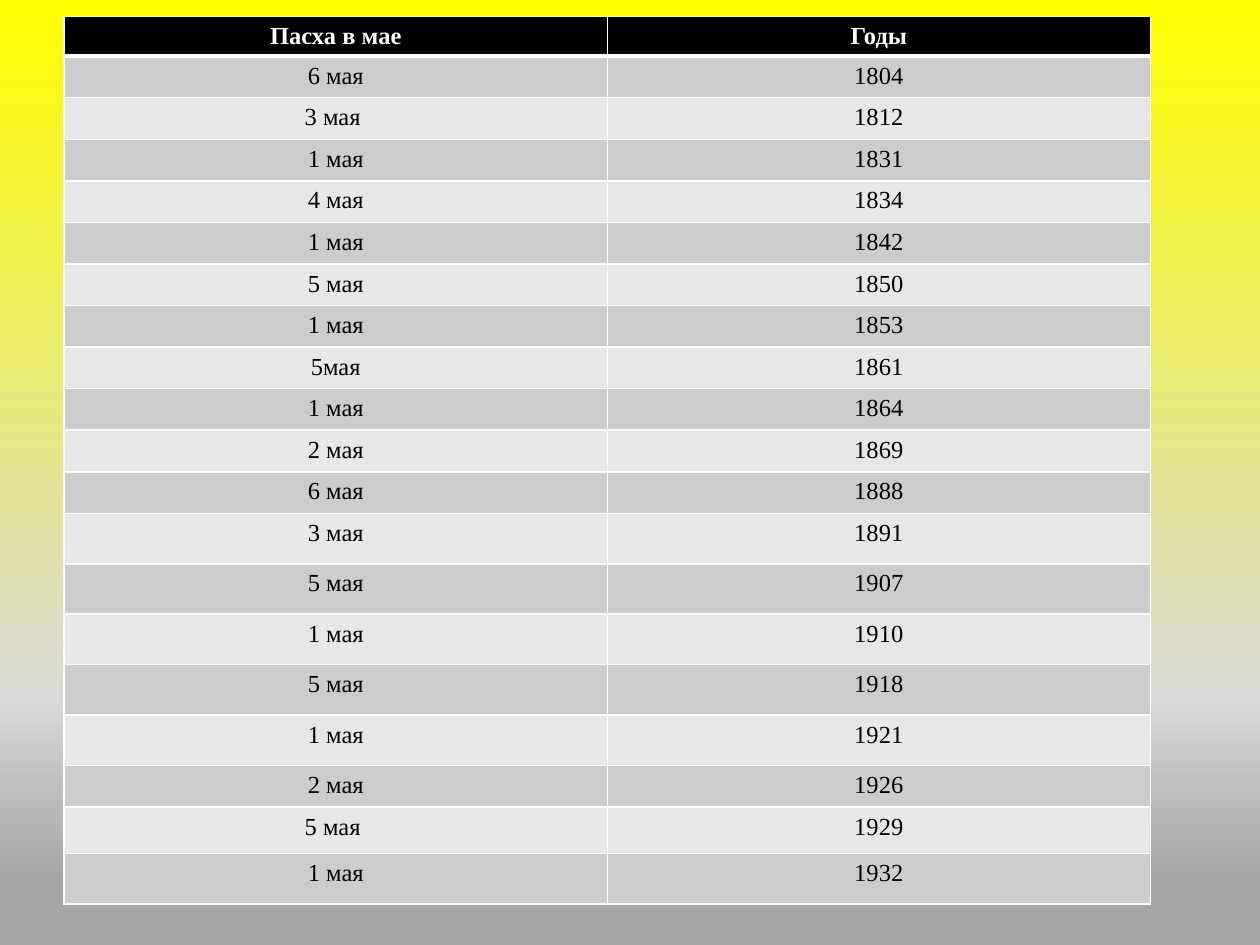
import pptx
import pptx.dml.color
import pptx.enum.text
import pptx.oxml
import pptx.oxml.ns
import pptx.util
from lxml import etree

Inches = pptx.util.Inches
qn = pptx.oxml.ns.qn

# Content: May Easter dates and their years
HEADINGS = ("Пасха в мае", "Годы")
EASTERS = [
    ("6 мая", "1804"), ("3 мая ", "1812"), ("1 мая", "1831"),
    ("4 мая", "1834"), ("1 мая", "1842"), ("5 мая", "1850"),
    ("1 мая", "1853"), ("5мая", "1861"), ("1 мая", "1864"),
    ("2 мая", "1869"), ("6 мая", "1888"), ("3 мая", "1891"),
    ("5 мая", "1907"), ("1 мая", "1910"), ("5 мая", "1918"),
    ("1 мая", "1921"), ("2 мая", "1926"), ("5 мая ", "1929"),
    ("1 мая", "1932"),
]

THEME = {
    "font": "Times New Roman",
    "size": 14,
    "heading_text": "FFFFFF",
    "heading_fill": "000000",
    "body_text": "000000",
    "bands": ("CCCCCC", "E7E7E7"),
    "border": "FFFFFF",
    "background": [(0, "FFFF00"), (68, "DCDCC7"), (74, "D9D9D9"),
                   (83, "BFBFBF"), (93, "A6A6A6"), (100, "A6A6A6")],
}

# Layout in inches
LEFT, TOP, WIDTH, HEIGHT = 0.51, 0.13, 8.62, 7.11
ROW_HEIGHTS = [0.21] + [0.33] * 11 + [0.4] * 5 + [0.33, 0.37, 0.4]


def rgb(code):
    return pptx.dml.color.RGBColor.from_string(code)


def paint_background(slide):
    fill = slide.background.fill
    fill.gradient()
    fill.gradient_angle = 270  # runs from top to bottom
    stops = slide.element.find(".//" + qn("a:gsLst"))
    for stop in list(stops):
        stops.remove(stop)
    for position, code in THEME["background"]:
        stop = etree.SubElement(stops, qn("a:gs"), pos=str(position * 1000))
        etree.SubElement(stop, qn("a:srgbClr"), val=code)


def add_borders(cell, bottom_width):
    properties = cell._tc.get_or_add_tcPr()
    widths = {"a:lnL": 1, "a:lnR": 1, "a:lnT": 1, "a:lnB": bottom_width}
    for index, (side, width) in enumerate(widths.items()):
        line = etree.Element(qn(side), w=str(pptx.util.Pt(width)))
        solid = etree.SubElement(line, qn("a:solidFill"))
        etree.SubElement(solid, qn("a:srgbClr"), val=THEME["border"])
        properties.insert(index, line)


def fill_cell(cell, text, is_heading, fill):
    cell.text_frame.text = text
    paragraph = cell.text_frame.paragraphs[0]
    paragraph.alignment = pptx.enum.text.PP_ALIGN.CENTER
    font = paragraph.runs[0].font
    font.name = THEME["font"]
    font.size = pptx.util.Pt(THEME["size"])
    font.bold = is_heading
    font.color.rgb = rgb(THEME["heading_text" if is_heading else "body_text"])
    cell.fill.solid()
    cell.fill.fore_color.rgb = rgb(fill)
    add_borders(cell, bottom_width=3 if is_heading else 1)


def add_easter_table(slide):
    entries = [HEADINGS] + EASTERS
    frame = slide.shapes.add_table(
        len(entries), len(HEADINGS),
        Inches(LEFT), Inches(TOP), Inches(WIDTH), Inches(HEIGHT))
    easter_table = frame.table
    for row_index, (entry, height) in enumerate(zip(entries, ROW_HEIGHTS)):
        easter_table.rows[row_index].height = Inches(height)
        is_heading = row_index == 0
        fill = (THEME["heading_fill"] if is_heading
                else THEME["bands"][(row_index - 1) % 2])
        for column_index, text in enumerate(entry):
            fill_cell(easter_table.cell(row_index, column_index),
                      text, is_heading, fill)
    frame.height = Inches(HEIGHT)


def main():
    deck = pptx.Presentation()
    deck.slide_width, deck.slide_height = Inches(10), Inches(7.5)
    slide = deck.slides.add_slide(deck.slide_layouts[6])
    paint_background(slide)
    add_easter_table(slide)
    deck.save("out.pptx")


if __name__ == "__main__":
    main()
